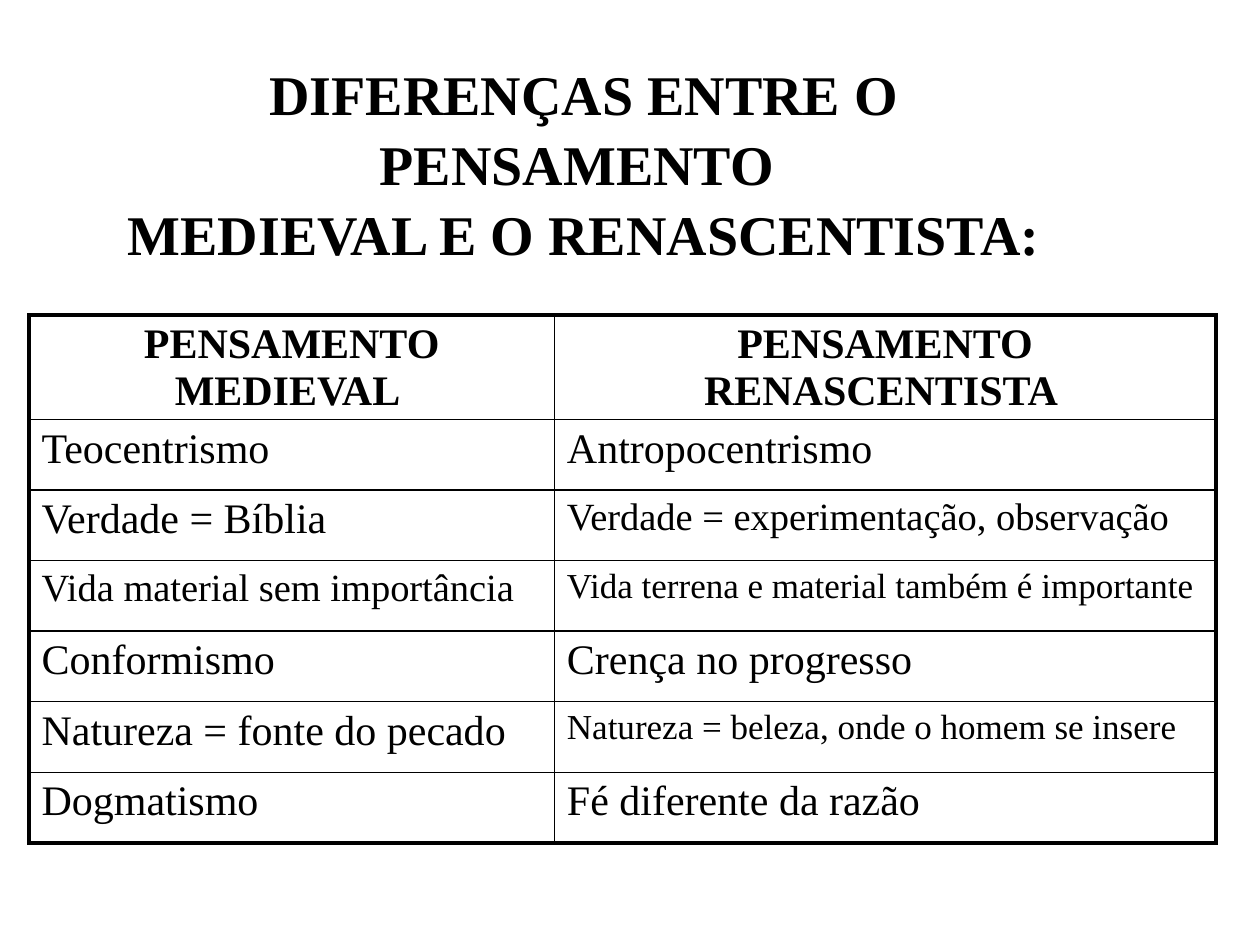
"""Build a slide comparing medieval and Renaissance thought."""
from dataclasses import dataclass

from lxml import etree
from pptx import Presentation
from pptx.dml.color import RGBColor
from pptx.enum.text import MSO_ANCHOR, MSO_AUTO_SIZE, PP_ALIGN
from pptx.oxml.ns import qn
from pptx.util import Inches, Pt

TOP, NO_FIT = MSO_ANCHOR.TOP, MSO_AUTO_SIZE.NONE
CENTER, JUSTIFY = PP_ALIGN.CENTER, PP_ALIGN.JUSTIFY


@dataclass(frozen=True)
class Theme:
    """Colours, font, type sizes and rule widths."""
    font: str = "Times New Roman"
    ink: str = "000000"
    paper: str = "FFFFFF"
    title: int = 32
    text: int = 24
    medium: int = 22
    small: int = 20
    outer: float = 2.25
    inner: float = 1


@dataclass(frozen=True)
class Entry:
    """Wording and type size of one table cell."""
    text: str
    size: int = Theme.text


THEME = Theme()
TITLE = ("DIFERENÇAS ENTRE O PENSAMENTO ", "MEDIEVAL E O RENASCENTISTA:")
COL_WIDTHS = (4.17, 5.25)
HEAD_HEIGHT, ROW_HEIGHT = 0.83, 0.56
ROWS = (
    (Entry("PENSAMENTO MEDIEVAL "), Entry("PENSAMENTO RENASCENTISTA ")),
    (Entry("Teocentrismo"), Entry("Antropocentrismo")),
    (Entry("Verdade = Bíblia"),
     Entry("Verdade = experimentação, observação", THEME.medium)),
    (Entry("Vida material sem importância", THEME.medium),
     Entry("Vida terrena e material também é importante", THEME.small)),
    (Entry("Conformismo"), Entry("Crença no progresso")),
    (Entry("Natureza = fonte do pecado"),
     Entry("Natureza = beleza, onde o homem se insere", THEME.small)),
    (Entry("Dogmatismo"), Entry("Fé diferente da razão")),
)


def format_paragraph(p, size: int, bold: bool, align: PP_ALIGN) -> None:
    """Align a paragraph and format its runs."""
    p.alignment = align
    for r in p.runs:
        r.font.name, r.font.size, r.font.bold = THEME.font, Pt(size), bold
        r.font.color.rgb = RGBColor.from_string(THEME.ink)


def set_borders(cell, widths: dict[str, float]) -> None:
    """Insert cell borders ahead of the cell fill."""
    tc_pr = cell._tc.get_or_add_tcPr()
    for i, (side, width) in enumerate(widths.items()):
        ln = etree.Element(qn(f"a:ln{side}"), w=str(Pt(width)))
        fill = etree.SubElement(ln, qn("a:solidFill"))
        etree.SubElement(fill, qn("a:srgbClr"), val=THEME.ink)
        tc_pr.insert(i, ln)


def add_title(slide) -> None:
    """Place the heading in the title placeholder."""
    sp = slide.shapes.title
    sp.left, sp.top, sp.width, sp.height = map(Inches, (0.62, 0.4, 8.03, 1.53))
    tf = sp.text_frame
    tf.text = "\n".join(TITLE)
    tf.word_wrap, tf.auto_size, tf.vertical_anchor = True, NO_FIT, TOP
    for p in tf.paragraphs:
        p.line_spacing = 1.04
        format_paragraph(p, THEME.title, True, CENTER)


def add_comparison(slide) -> None:
    """Draw the two-column comparison table."""
    last_row, last_col = len(ROWS) - 1, len(COL_WIDTHS) - 1
    height = HEAD_HEIGHT + last_row * ROW_HEIGHT
    table = slide.shapes.add_table(
        len(ROWS), len(COL_WIDTHS), Inches(0.23), Inches(2.5),
        Inches(sum(COL_WIDTHS)), Inches(height)).table
    table.first_row = table.horz_banding = False
    for col, width in zip(table.columns, COL_WIDTHS):
        col.width = Inches(width)
    for i, entries in enumerate(ROWS):
        head = i == 0
        table.rows[i].height = Inches(HEAD_HEIGHT if head else ROW_HEIGHT)
        for j, entry in enumerate(entries):
            cell = table.cell(i, j)
            cell.text = entry.text
            cell.margin_bottom = Inches(0.01)
            cell.fill.solid()
            cell.fill.fore_color.rgb = RGBColor.from_string(THEME.paper)
            edges = {"L": j == 0, "R": j == last_col, "T": head, "B": i == last_row}
            set_borders(cell, {side: THEME.outer if edge else THEME.inner
                               for side, edge in edges.items()})
            format_paragraph(cell.text_frame.paragraphs[0], entry.size, head,
                             CENTER if head else JUSTIFY)


def main() -> None:
    """Create and save the presentation."""
    prs = Presentation()
    prs.slide_width, prs.slide_height = Inches(10), Inches(7.5)
    slide = prs.slides.add_slide(prs.slide_layouts[5])
    add_title(slide)
    add_comparison(slide)
    prs.save("out.pptx")


if __name__ == "__main__":
    main()
